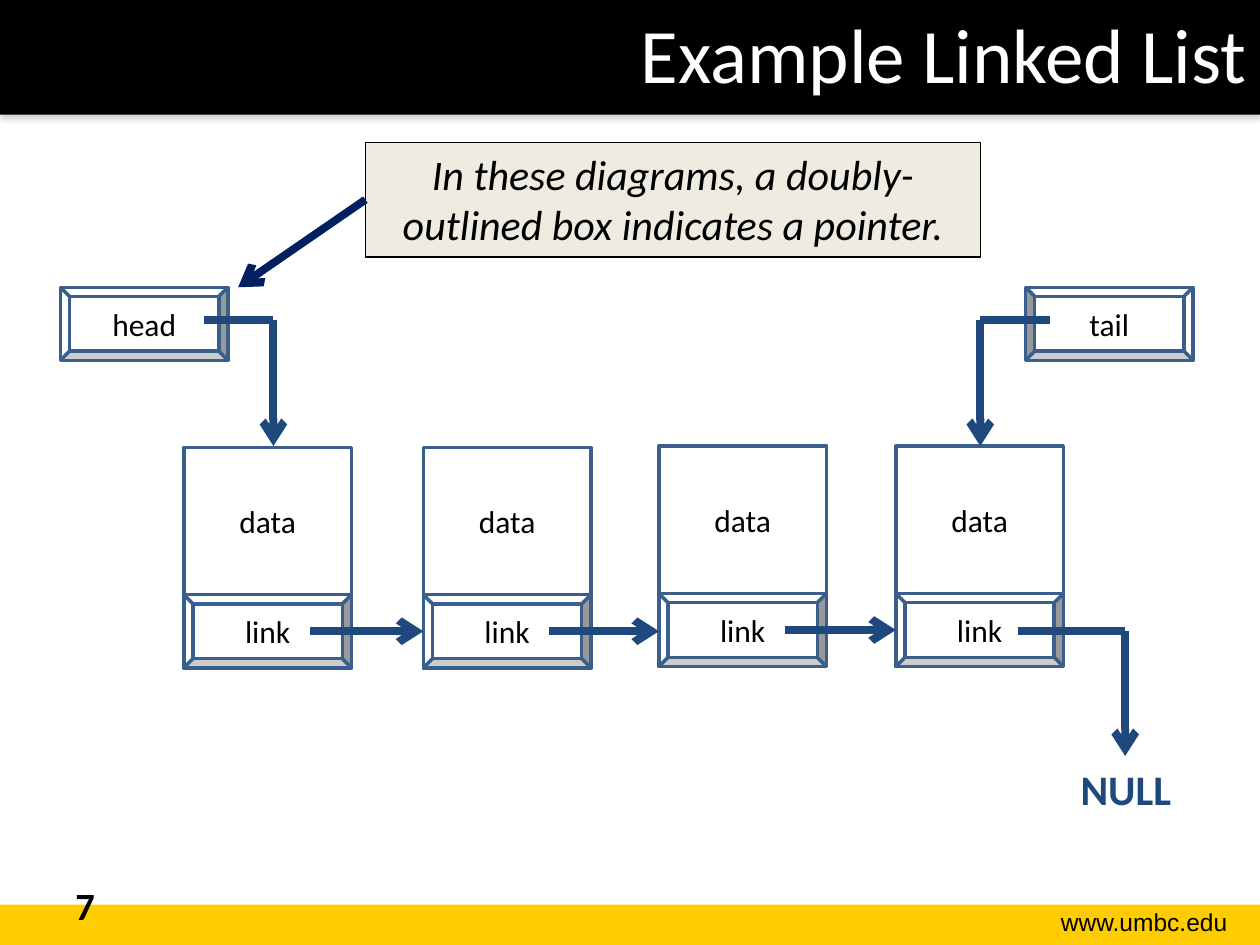
from lxml import etree
from pptx import Presentation
from pptx.dml.color import RGBColor
from pptx.enum.shapes import MSO_CONNECTOR, MSO_SHAPE
from pptx.enum.text import MSO_ANCHOR, PP_ALIGN
from pptx.oxml import parse_xml
from pptx.oxml.ns import nsdecls, qn
from pptx.util import Inches, Pt

RECTANGLE, BEVEL = MSO_SHAPE.RECTANGLE, MSO_SHAPE.BEVEL
STRAIGHT = MSO_CONNECTOR.STRAIGHT
LEFT, CENTER, RIGHT = PP_ALIGN.LEFT, PP_ALIGN.CENTER, PP_ALIGN.RIGHT
TOP, MIDDLE = MSO_ANCHOR.TOP, MSO_ANCHOR.MIDDLE

COLORS = {
    "black": "000000", "white": "FFFFFF", "gold": "FFCC00", "shadow": "808080",
    "outline": "3A5F8C", "arrow": "1F497D", "pointer": "002060", "callout": "EEECE1",
}
BOX_WIDTH, NODE_HEIGHT, POINTER_HEIGHT = 1.33, 1.75, 0.58


def color(name):
    return RGBColor.from_string(COLORS[name])


def write(shape, text, size, align=CENTER, anchor=TOP, font_color="black", **font_format):
    frame = shape.text_frame
    frame.word_wrap = True
    frame.vertical_anchor = anchor
    paragraph = frame.paragraphs[0]
    paragraph.text = text
    paragraph.alignment = align
    values = {"name": "Calibri", "size": Pt(size), **font_format}
    for attribute, value in values.items():
        setattr(paragraph.font, attribute, value)
    paragraph.font.color.rgb = color(font_color)


def add_box(slide, kind, box, fill, line=None, line_width=2):
    shape = slide.shapes.add_shape(kind, *map(Inches, box))
    shape.shadow.inherit = False
    shape.fill.solid()
    shape.fill.fore_color.rgb = color(fill)
    if line:
        shape.line.color.rgb = color(line)
        shape.line.width = Pt(line_width)
    else:
        shape.line.fill.background()
    return shape


def add_text(slide, box, text, size, **text_format):
    shape = slide.shapes.add_textbox(*map(Inches, box))
    write(shape, text, size, **text_format)


def add_path(slide, points, line_color="arrow"):
    """Join the points with straight lines; the last one carries the arrowhead."""
    for start, end in zip(points, points[1:]):
        connector = slide.shapes.add_connector(STRAIGHT, *map(Inches, start + end))
        connector.line.color.rgb = color(line_color)
        connector.line.width = Pt(4.5)
        etree.SubElement(connector._element.spPr, qn("a:effectLst"))
    line = connector.line._get_or_add_ln()
    etree.SubElement(line, qn("a:tailEnd"), type="arrow")


def add_pointer(slide, left, top, label):
    box = (left, top, BOX_WIDTH, POINTER_HEIGHT)
    shape = add_box(slide, BEVEL, box, "white", "outline")
    write(shape, label, 18, anchor=MIDDLE)
    return shape


def add_node(slide, left, top):
    box = (left, top, BOX_WIDTH, NODE_HEIGHT)
    shape = add_box(slide, RECTANGLE, box, "white", "outline")
    write(shape, "data", 18, anchor=MIDDLE)
    shape.text_frame.margin_bottom = Inches(POINTER_HEIGHT + 0.05)
    add_pointer(slide, left, top + NODE_HEIGHT - POINTER_HEIGHT, "link")


def add_frame(slide, title_text, number):
    """Header bar with title, footer bar with address, and slide number."""
    add_box(slide, RECTANGLE, (0, 7.18, 10, 0.32), "gold")
    header = add_box(slide, RECTANGLE, (0, 0, 10, 0.91), "black")
    effects = header._element.spPr.find(qn("a:effectLst"))
    effects.append(parse_xml(
        f'<a:outerShdw {nsdecls("a")} blurRad="{Pt(3.1)}" dist="{Pt(1.8)}" dir="5400000">'
        f'<a:srgbClr val="{COLORS["shadow"]}"><a:alpha val="35000"/></a:srgbClr>'
        "</a:outerShdw>"))
    add_text(slide, (7.85, 7.15, 1.99, 0.34), "www.umbc.edu", 14, align=RIGHT, name="Arial")

    title = slide.shapes.title
    title.left, title.top, title.width, title.height = map(Inches, (1, 0, 9, 1.25))
    write(title, title_text, 44, align=RIGHT, font_color="white")
    slide.shapes._spTree.append(title._element)  # in front of the header bar
    add_text(slide, (0.5, 6.95, 2.33, 0.4), number, 22, align=LEFT, bold=True)


def add_list(slide, nodes):
    for left, top in nodes:
        add_node(slide, left, top)
    for (left, top), (next_left, _) in zip(nodes, nodes[1:]):
        add_path(slide, [(left + 1, top + 1.46), (next_left, top + 1.46)])

    last_left, last_top = nodes[-1]
    link_y = last_top + 1.47
    add_path(slide, [(last_left + 0.97, link_y), (8.93, link_y), (8.93, 6)])
    add_text(slide, (8.16, 6.01, 1.55, 0.51), "NULL", 24, font_color="arrow", bold=True)


def add_end_pointers(slide, top, node_top):
    line_y = top + 0.26
    add_pointer(slide, 0.48, top, "head")
    add_path(slide, [(1.62, line_y), (2.17, line_y), (2.17, node_top)])
    tail = add_pointer(slide, 8.14, top, "tail")
    tail._element.spPr.find(qn("a:xfrm")).set("flipH", "1")
    add_path(slide, [(8.33, line_y), (7.78, line_y), (7.78, node_top)])


def add_callout(slide, box, target):
    left, top, _, height = box
    shape = add_box(slide, RECTANGLE, box, "callout", "black", 0.75)
    write(shape, "In these diagrams, a doubly-outlined box indicates a pointer.", 24, italic=True)
    add_path(slide, [(left, top + height / 2), target], "pointer")


def main():
    presentation = Presentation()
    presentation.slide_width, presentation.slide_height = Inches(10), Inches(7.5)
    slide = presentation.slides.add_slide(presentation.slide_layouts[5])
    add_frame(slide, "Example Linked List", "7")
    add_list(slide, [(1.46, 3.55), (3.36, 3.55), (5.23, 3.54), (7.11, 3.54)])
    add_end_pointers(slide, 2.28, 3.54)
    add_callout(slide, (2.9, 1.13, 4.88, 0.91), (1.89, 2.28))
    presentation.save("out.pptx")


if __name__ == "__main__":
    main()
